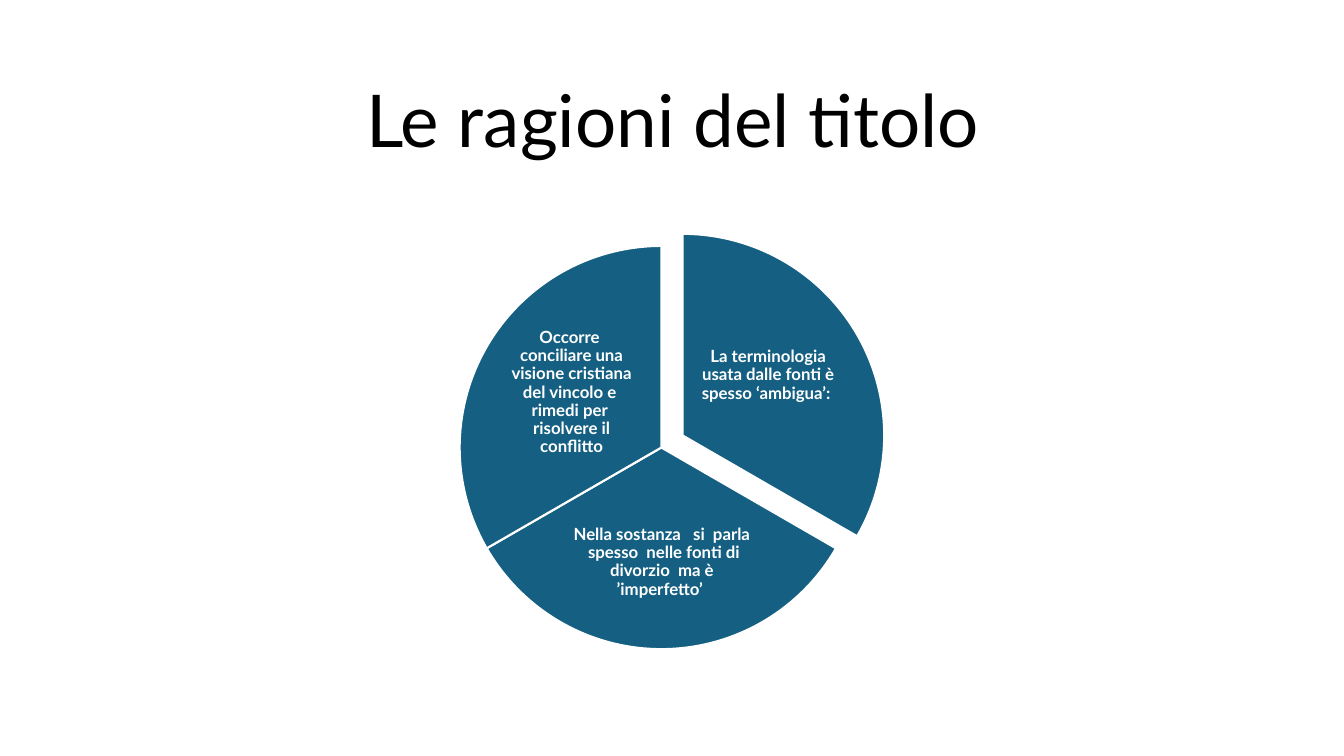
from pptx import Presentation
from pptx.dml.color import RGBColor
from pptx.enum.shapes import MSO_SHAPE
from pptx.enum.text import MSO_ANCHOR, PP_ALIGN
from pptx.util import Inches, Pt

COLORS = {"title": "000000", "slice": "156082", "edge": "FFFFFF", "label": "FFFFFF"}
FONT = "Lato"
DIAMETER = 4
SWEEP = 120
ADJUSTMENT_PER_DEGREE = 0.6

REASONS = [
    {
        "text": "La terminologia usata dalle fonti è spesso ‘ambigua’: ",
        "pull": (0.21, -0.12),
        "label_box": (2.38, 0.62, 1.36, 1.33),
    },
    {
        "text": "Nella sostanza   si  parla  spesso  nelle fonti di divorzio  ma è ’imperfetto’ ",
        "pull": (0, 0),
        "label_box": (1.1, 2.52, 1.81, 1.24),
    },
    {
        "text": "Occorre  conciliare una visione cristiana del vincolo e  rimedi per  risolvere il conflitto",
        "pull": (0, 0),
        "label_box": (0.43, 0.79, 1.36, 1.33),
    },
]


def color(name):
    """Return the named colour of the palette."""
    return RGBColor.from_string(COLORS[name])


def add_text(slide, box, text, size, color_name, bold=False, inset=(0.1, 0.05)):
    """Place one centred paragraph in the given box."""
    frame = slide.shapes.add_textbox(*map(Inches, box)).text_frame
    frame.word_wrap = True
    frame.vertical_anchor = MSO_ANCHOR.MIDDLE
    frame.margin_left = frame.margin_right = Inches(inset[0])
    frame.margin_top = frame.margin_bottom = Inches(inset[1])
    paragraph = frame.paragraphs[0]
    paragraph.text = text
    paragraph.alignment = PP_ALIGN.CENTER
    paragraph.line_spacing = 0.9
    paragraph.font.name = FONT
    paragraph.font.size = Pt(size)
    paragraph.font.bold = bold
    paragraph.font.color.rgb = color(color_name)


def add_slice(slide, left, top, start):
    """Draw a third of the circle clockwise from the start angle."""
    third = slide.shapes.add_shape(
        MSO_SHAPE.PIE, Inches(left), Inches(top), Inches(DIAMETER), Inches(DIAMETER)
    )
    third.adjustments[0] = start * ADJUSTMENT_PER_DEGREE
    third.adjustments[1] = (start + SWEEP) % 360 * ADJUSTMENT_PER_DEGREE
    third.shadow.inherit = False
    third.fill.solid()
    third.fill.fore_color.rgb = color("slice")
    third.line.color.rgb = color("edge")
    third.line.width = Pt(1.5)


def add_reasons(slide, left, top):
    """Draw the circle of reasons, each slice with its label."""
    for index, reason in enumerate(REASONS):
        pull_x, pull_y = reason["pull"]
        add_slice(slide, left + pull_x, top + pull_y, (270 + index * SWEEP) % 360)
        x, y, width, height = reason["label_box"]
        label_box = (left + x, top + y, width, height)
        add_text(slide, label_box, reason["text"], 12, "label", True, (0.02, 0.02))


def main():
    """Build and save the slide."""
    presentation = Presentation()
    presentation.slide_width = Inches(13.33)
    presentation.slide_height = Inches(7.5)
    slide = presentation.slides.add_slide(presentation.slide_layouts[6])
    add_text(slide, (0.92, 0.61, 11.5, 1.24), "Le ragioni del titolo", 52, "title")
    add_reasons(slide, 4.56, 2.44)
    presentation.save("out.pptx")


if __name__ == "__main__":
    main()
